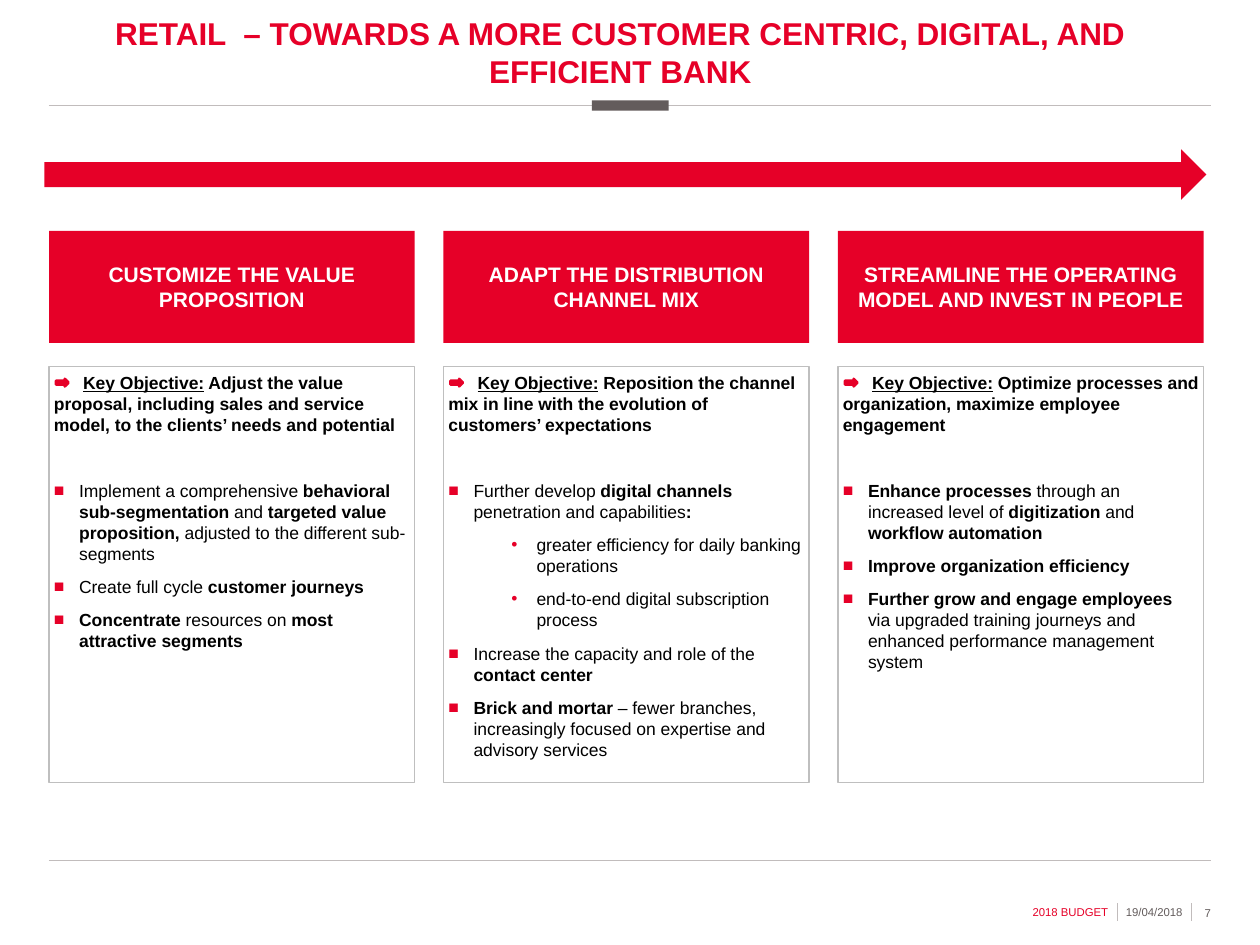
from lxml.etree import SubElement
from pptx import Presentation
from pptx.dml.color import RGBColor
from pptx.enum.shapes import MSO_CONNECTOR, MSO_SHAPE
from pptx.enum.text import MSO_ANCHOR, PP_ALIGN
from pptx.oxml.ns import qn
from pptx.util import Pt

RED = RGBColor(0xE6, 0x00, 0x28)
DARK_GREY = RGBColor(0x63, 0x5C, 0x5C)
RULE_GREY = RGBColor(0xC1, 0xBC, 0xBC)
BORDER_GREY = RGBColor(0xBF, 0xBF, 0xBF)
WHITE = RGBColor(0xFF, 0xFF, 0xFF)
BLACK = RGBColor(0x00, 0x00, 0x00)

COLUMN_LEFT, COLUMN_WIDTH, COLUMN_PITCH = 28, 209, 225.4
HEADER_TOP, HEADER_HEIGHT = 132, 64
BODY_TOP, BODY_HEIGHT = 209.6, 237.6

# Each column: header, objective, then (level, text) bullets; ** toggles bold.
COLUMNS = [
    ("CUSTOMIZE THE VALUE PROPOSITION",
     "Adjust the value proposal, including sales and service model, "
     "to the clients’ needs and potential",
     [(0, "Implement a comprehensive **behavioral sub-segmentation** and "
          "**targeted value proposition, **adjusted to the different sub-segments"),
      (0, "Create full cycle **customer journeys**"),
      (0, "**Concentrate **resources on **most attractive segments**")]),
    ("ADAPT THE DISTRIBUTION CHANNEL MIX",
     "Reposition the channel mix in line with the evolution of customers’ expectations",
     [(0, "Further develop **digital channels **penetration and capabilities**:**"),
      (1, "greater efficiency for daily banking operations"),
      (1, "end-to-end digital subscription process"),
      (0, "Increase the capacity and role of the **contact center**"),
      (0, "**Brick and mortar **– fewer branches, increasingly focused on "
          "expertise and advisory services")]),
    ("STREAMLINE THE OPERATING MODEL AND INVEST IN PEOPLE",
     "Optimize processes and organization, maximize employee engagement",
     [(0, "**Enhance processes **through an increased level of "
          "**digitization** and **workflow automation**"),
      (0, "**Improve organization efficiency**"),
      (0, "**Further grow and engage employees **via upgraded training journeys "
          "and enhanced performance management system")]),
]


def format_run(run, size, color, bold=False):
    run.font.name = "Arial"
    run.font.size = Pt(size)
    run.font.color.rgb = color
    run.font.bold = bold


def set_margins(text_frame, left, top, right, bottom):
    text_frame.margin_left, text_frame.margin_top = Pt(left), Pt(top)
    text_frame.margin_right, text_frame.margin_bottom = Pt(right), Pt(bottom)


def add_filled_shape(slide, kind, left, top, width, height, fill, line=None, line_width=0.75):
    shape = slide.shapes.add_shape(kind, Pt(left), Pt(top), Pt(width), Pt(height))
    shape.shadow.inherit = False
    shape.fill.solid()
    shape.fill.fore_color.rgb = fill
    if line is None:
        shape.line.fill.background()
    else:
        shape.line.color.rgb = line
        shape.line.width = Pt(line_width)
    return shape


def add_rule(slide, x1, y1, x2, y2):
    connector = slide.shapes.add_connector(
        MSO_CONNECTOR.STRAIGHT, Pt(x1), Pt(y1), Pt(x2), Pt(y2))
    connector.line.color.rgb = RULE_GREY
    connector.line.width = Pt(0.5)
    SubElement(connector.element.spPr, qn("a:effectLst"))


def add_title(slide, text):
    box = slide.shapes.add_textbox(Pt(26), Pt(7.6), Pt(663), Pt(44))
    text_frame = box.text_frame
    text_frame.word_wrap = True
    text_frame.vertical_anchor = MSO_ANCHOR.MIDDLE
    set_margins(text_frame, 0, 0, 6, 0)
    text_frame.text = text
    paragraph = text_frame.paragraphs[0]
    paragraph.alignment = PP_ALIGN.CENTER
    format_run(paragraph.runs[0], 18, RED, bold=True)


def add_footer_text(slide, text, right, top, width, color):
    """Add a one-line label whose text ends at the given right edge."""
    box = slide.shapes.add_textbox(Pt(right - width), Pt(top), Pt(width), Pt(13))
    text_frame = box.text_frame
    text_frame.word_wrap = False
    set_margins(text_frame, 0, 3, 0, 3)
    text_frame.text = text
    paragraph = text_frame.paragraphs[0]
    paragraph.alignment = PP_ALIGN.RIGHT
    format_run(paragraph.runs[0], 6.5, color)


def add_header(slide, left, text):
    shape = add_filled_shape(slide, MSO_SHAPE.RECTANGLE, left, HEADER_TOP,
                             COLUMN_WIDTH, HEADER_HEIGHT, RED)
    text_frame = shape.text_frame
    text_frame.word_wrap = True
    text_frame.vertical_anchor = MSO_ANCHOR.MIDDLE
    set_margins(text_frame, 4, 4, 4, 4)
    text_frame.text = text
    paragraph = text_frame.paragraphs[0]
    paragraph.alignment = PP_ALIGN.CENTER
    format_run(paragraph.runs[0], 12, WHITE, bold=True)


def set_indent(paragraph, left, first_line):
    properties = paragraph._p.get_or_add_pPr()
    properties.set("marL", str(Pt(left)))
    properties.set("indent", str(Pt(first_line)))
    return properties


def add_bullet(paragraph, level):
    paragraph.level = level
    properties = set_indent(paragraph, 50.4 if level else 14.4, -14.4)
    bullet_color = SubElement(properties, qn("a:buClr"))
    SubElement(bullet_color, qn("a:srgbClr"), val=str(RED))
    SubElement(properties, qn("a:buFont"), typeface="Arial")
    SubElement(properties, qn("a:buChar"), char="•" if level else "■")


def space_paragraph(paragraph, before, after):
    paragraph.alignment = PP_ALIGN.LEFT
    paragraph.line_spacing = Pt(12)
    paragraph.space_before = Pt(before)
    paragraph.space_after = Pt(after)


def add_marked_runs(paragraph, text):
    """Add runs, switching bold on and off at each ** mark."""
    for index, part in enumerate(text.split("**")):
        if part:
            run = paragraph.add_run()
            run.text = part
            format_run(run, 10, BLACK, bold=index % 2 == 1)


def add_body(slide, left, objective, bullets):
    shape = add_filled_shape(slide, MSO_SHAPE.RECTANGLE, left, BODY_TOP,
                             COLUMN_WIDTH, BODY_HEIGHT, WHITE, BORDER_GREY)
    text_frame = shape.text_frame
    text_frame.word_wrap = True
    text_frame.vertical_anchor = MSO_ANCHOR.TOP
    set_margins(text_frame, 2.8, 2.8, 2.8, 2.8)

    paragraph = text_frame.paragraphs[0]
    set_indent(paragraph, 0, 16.7)
    space_paragraph(paragraph, 0, 23)
    for text in ("Key Objective:", f" {objective}"):
        add_marked_runs(paragraph, f"**{text}**")
    paragraph.runs[0].font.underline = True

    for level, text in bullets:
        paragraph = text_frame.add_paragraph()
        add_bullet(paragraph, level)
        space_paragraph(paragraph, 3, 4)
        add_marked_runs(paragraph, text)

    add_filled_shape(slide, MSO_SHAPE.RIGHT_ARROW, left + 4, BODY_TOP + 6.9,
                     7.2, 4.3, RED, RED, 1.5)


def main():
    presentation = Presentation()
    presentation.slide_width, presentation.slide_height = Pt(720), Pt(540)
    slide = presentation.slides.add_slide(presentation.slide_layouts[6])

    for y in (60.5, 491.8):
        add_rule(slide, 28, y, 692, y)
    add_filled_shape(slide, MSO_SHAPE.RECTANGLE, 338.2, 57.4, 44, 5.8, DARK_GREY)
    add_title(slide, "RETAIL  – TOWARDS A MORE CUSTOMER CENTRIC, DIGITAL, AND EFFICIENT BANK")

    add_filled_shape(slide, MSO_SHAPE.RIGHT_ARROW, 25.4, 85.4, 664, 28.8, RED)
    for index, (header, objective, bullets) in enumerate(COLUMNS):
        left = COLUMN_LEFT + index * COLUMN_PITCH
        add_header(slide, left, header)
        add_body(slide, left, objective, bullets)

    add_footer_text(slide, "2018 BUDGET", 633.3, 514.4, 52, RED)
    add_footer_text(slide, "19/04/2018", 675.8, 514.4, 36, DARK_GREY)
    add_footer_text(slide, "7", 692, 515, 9.4, DARK_GREY)
    for x in (638.6, 680.8):
        add_rule(slide, x, 516.2, x, 526.3)

    presentation.save("out.pptx")


if __name__ == "__main__":
    main()
